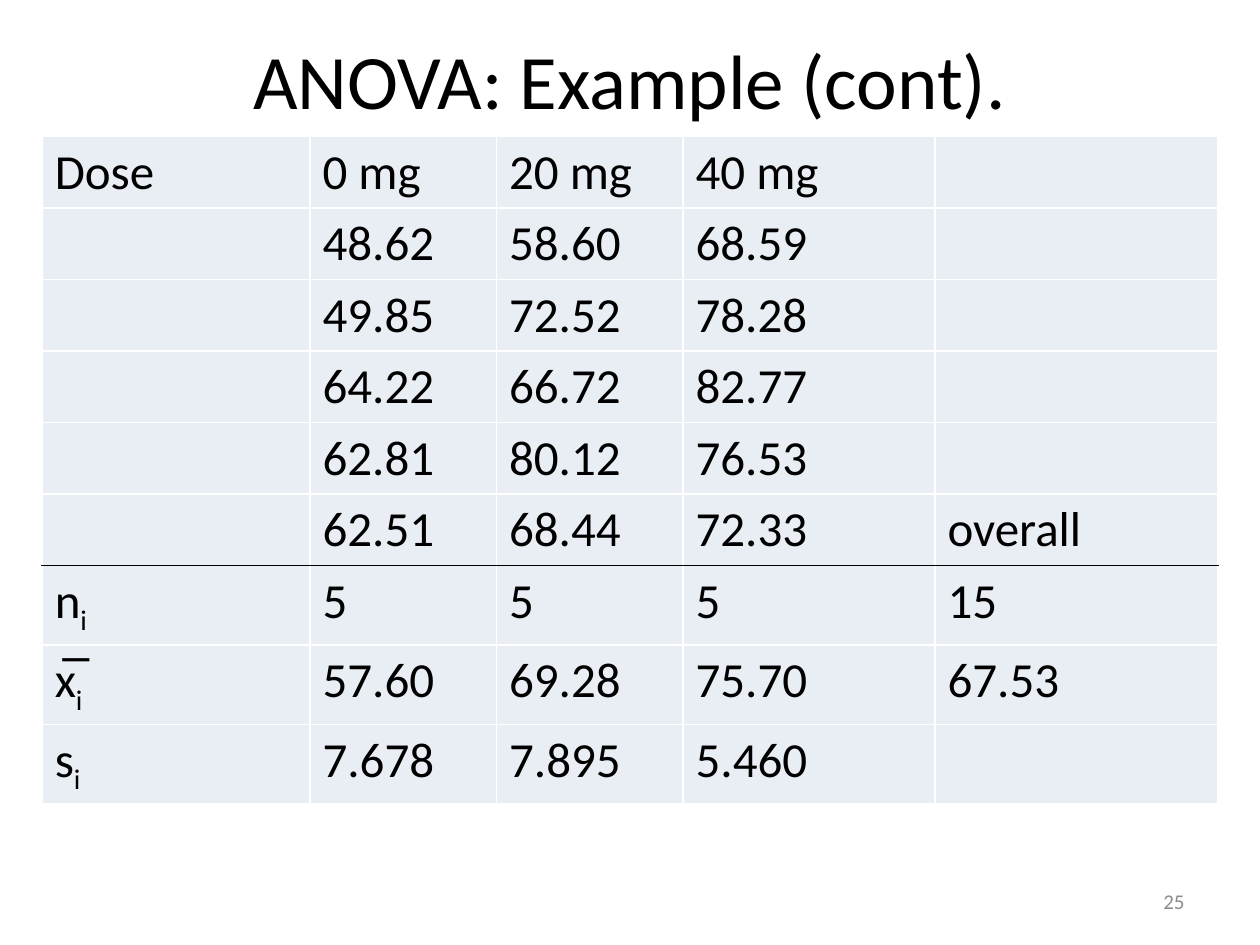
from dataclasses import dataclass

from lxml.etree import SubElement
from pptx import Presentation
from pptx.dml.color import RGBColor
from pptx.enum.text import MSO_ANCHOR as Anchor, PP_ALIGN as Align
from pptx.oxml.ns import qn
from pptx.util import Cm, Pt

BLACK = RGBColor(0x00, 0x00, 0x00)
WHITE = RGBColor(0xFF, 0xFF, 0xFF)
GREY = RGBColor(0x8C, 0x8C, 0x8C)
PALE_BLUE = RGBColor(0xE9, 0xED, 0xF4)
FONT = "Calibri"


@dataclass
class Label:
    text: str
    left: float
    top: float
    width: float
    height: float
    size: int
    color: RGBColor
    align: Align


LABELS = [
    Label("ANOVA: Example (cont).", 1.27, 0, 22.86, 3.18, 44, BLACK, Align.CENTER),
    Label("25", 18.2, 17.65, 5.93, 1.02, 12, GREY, Align.RIGHT),
]

COLUMN_WIDTHS = [5.4, 3.76, 3.76, 5.08, 5.7]
ROW_HEIGHT = 1.04

# An underscore in a cell marks the start of its subscript
DOSE_ROWS = [
    ["Dose", "0 mg", "20 mg", "40 mg", ""],
    ["", "48.62", "58.60", "68.59", ""],
    ["", "49.85", "72.52", "78.28", ""],
    ["", "64.22", "66.72", "82.77", ""],
    ["", "62.81", "80.12", "76.53", ""],
    ["", "62.51", "68.44", "72.33", "overall"],
]
SUMMARY_ROWS = [
    ["n_i", "5", "5", "5", "15"],
    ["x̅_i", "57.60", "69.28", "75.70", "67.53"],
    ["s_i", "7.678", "7.895", "5.460", ""],
]


def style_paragraph(paragraph, size: int, color: RGBColor) -> None:
    paragraph.font.name = FONT
    paragraph.font.size = Pt(size)
    paragraph.font.color.rgb = color


def add_label(slide, label: Label) -> None:
    box = slide.shapes.add_textbox(
        Cm(label.left), Cm(label.top), Cm(label.width), Cm(label.height))
    frame = box.text_frame
    frame.word_wrap = True
    frame.vertical_anchor = Anchor.MIDDLE
    paragraph = frame.paragraphs[0]
    paragraph.text = label.text
    paragraph.alignment = label.align
    style_paragraph(paragraph, label.size, label.color)


def set_borders(cell, top: RGBColor, bottom: RGBColor) -> None:
    """Draw 1 pt borders; they must come before the cell's fill."""
    properties = cell._tc.get_or_add_tcPr()
    sides = {"a:lnL": WHITE, "a:lnR": WHITE, "a:lnT": top, "a:lnB": bottom}
    for tag, color in sides.items():
        line = SubElement(properties, qn(tag), w=str(Pt(1)))
        fill = SubElement(line, qn("a:solidFill"))
        SubElement(fill, qn("a:srgbClr"), val=str(color))


def fill_cell(cell, text: str) -> None:
    cell.fill.solid()
    cell.fill.fore_color.rgb = PALE_BLUE
    paragraph = cell.text_frame.paragraphs[0]
    style_paragraph(paragraph, 28, BLACK)
    base, _, subscript = text.partition("_")
    if base:
        paragraph.add_run().text = base
    if subscript:
        run = paragraph.add_run()
        run.text = subscript
        run._r.get_or_add_rPr().set("baseline", "-25000")


def add_dose_table(slide) -> None:
    rows = DOSE_ROWS + SUMMARY_ROWS
    table = slide.shapes.add_table(
        len(rows), len(COLUMN_WIDTHS),
        Cm(0.85), Cm(2.75), Cm(sum(COLUMN_WIDTHS)), Cm(12.95)).table
    table.first_row = False
    table.horz_banding = False
    for column, width in zip(table.columns, COLUMN_WIDTHS):
        column.width = Cm(width)

    # A black rule separates the doses from the summary
    summary_start = len(DOSE_ROWS)
    for r, texts in enumerate(rows):
        table.rows[r].height = Cm(ROW_HEIGHT)
        top = BLACK if r == summary_start else WHITE
        bottom = BLACK if r + 1 == summary_start else WHITE
        for c, text in enumerate(texts):
            cell = table.cell(r, c)
            set_borders(cell, top, bottom)
            fill_cell(cell, text)


def main() -> None:
    presentation = Presentation()
    presentation.slide_width = Cm(25.4)
    presentation.slide_height = Cm(19.05)
    slide = presentation.slides.add_slide(presentation.slide_layouts[6])

    # Title and slide number
    for label in LABELS:
        add_label(slide, label)

    # Measurements by dose
    add_dose_table(slide)
    presentation.save("out.pptx")


if __name__ == "__main__":
    main()
